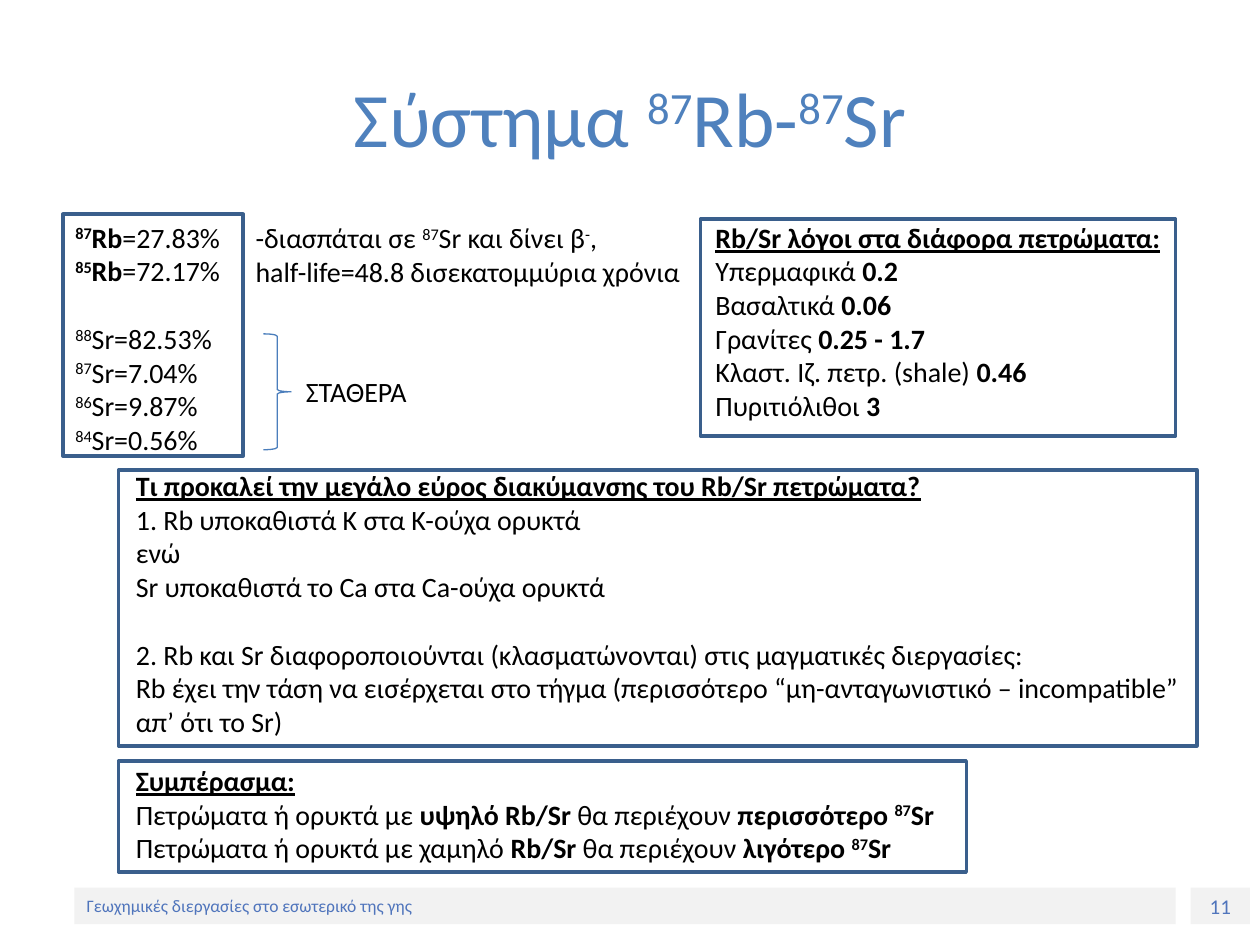
from pptx import Presentation
from pptx.dml.color import RGBColor
from pptx.enum.shapes import MSO_SHAPE
from pptx.enum.text import MSO_ANCHOR, PP_ALIGN
from pptx.util import Inches, Pt

WIDTH, HEIGHT = Inches(10), Inches(7.5)
FONT = "Calibri"
BODY_SIZE = 16
BLANK_LAYOUT = 6
COLORS = {
    "text": "000000",
    "title": "4F81BD",
    "footer": "5075BC",
    "footer_fill": "F2F2F2",
    "frame": "3A5F8C",
    "brace": "4B7EBC",
}
# Marks that switch a style on and off within a line of text
MARKS = {"*": "bold", "_": "underline", "^": "superscript"}

ISOTOPES = [
    "*^87^Rb*=27.83%",
    "*^85^Rb*=72.17%",
    "^88^Sr=82.53%",
    "^87^Sr=7.04%",
    "^86^Sr=9.87%",
    "^84^Sr=0.56%",
]
DECAY = [
    "-διασπάται σε ^87^Sr και δίνει β^-^,",
    "half-life=48.8 δισεκατομμύρια χρόνια",
]
RATIOS = [
    "*_Rb/Sr λόγοι στα διάφορα πετρώματα:_*",
    "Υπερμαφικά *0.2*",
    "Βασαλτικά *0.06*",
    "Γρανίτες *0.25 - 1.7*",
    "Κλαστ. Ιζ. πετρ. (shale) *0.46*",
    "Πυριτιόλιθοι *3*",
]
CAUSES = [
    "*_Τι προκαλεί την μεγάλο εύρος διακύμανσης του Rb/Sr πετρώματα?_*",
    "1. Rb υποκαθιστά K στα K-ούχα ορυκτά",
    "ενώ",
    "Sr υποκαθιστά το Ca στα Ca-ούχα ορυκτά",
    "2. Rb και Sr διαφοροποιούνται (κλασματώνονται) στις μαγματικές διεργασίες:",
    "Rb έχει την τάση να εισέρχεται στο τήγμα (περισσότερο “μη-ανταγωνιστικό – incompatible”",
    "απ’ ότι το Sr)",
]
CONCLUSION = [
    "*_Συμπέρασμα:_*",
    "Πετρώματα ή ορυκτά με *υψηλό Rb/Sr* θα περιέχουν *περισσότερο ^87^Sr*",
    "Πετρώματα ή ορυκτά με χαμηλό *Rb/Sr* θα περιέχουν *λιγότερο ^87^Sr*",
]


def area(left, top, width, height):
    """Turn percentages of the slide's size into lengths."""
    return [
        int(share * full / 100)
        for share, full in zip((left, top, width, height), (WIDTH, HEIGHT) * 2)
    ]


def color(name):
    return RGBColor.from_string(COLORS[name])


def split_marks(line):
    """Yield each piece of a marked line with the set of its styles."""
    styles, piece = set(), ""
    for letter in line:
        if letter in MARKS:
            if piece:
                yield piece, set(styles)
            styles ^= {MARKS[letter]}
            piece = ""
        else:
            piece += letter
    if piece:
        yield piece, styles


def fill_text(frame, lines, size, color_name, align, anchor, gap_before=None):
    """Write marked lines; the line numbered gap_before follows an empty line's gap."""
    frame.word_wrap = True
    frame.vertical_anchor = anchor
    for index, line in enumerate(lines):
        paragraph = frame.paragraphs[0] if index == 0 else frame.add_paragraph()
        paragraph.alignment = align
        if index == gap_before:
            paragraph.space_before = Pt(size * 1.22)
        for piece, styles in split_marks(line):
            span = paragraph.add_run()
            span.text = piece
            span.font.name = FONT
            span.font.size = Pt(size)
            span.font.color.rgb = color(color_name)
            span.font.bold = "bold" in styles
            span.font.underline = "underline" in styles
            if "superscript" in styles:
                span.font._element.set("baseline", "30000")


def add_text(page, place, lines, size=BODY_SIZE, color_name="text",
             align=PP_ALIGN.LEFT, anchor=MSO_ANCHOR.TOP, gap_before=None):
    box = page.shapes.add_textbox(*area(*place))
    fill_text(box.text_frame, lines, size, color_name, align, anchor, gap_before)


def add_outline(page, kind, place, color_name, width):
    shape = page.shapes.add_shape(kind, *area(*place))
    shape.shadow.inherit = False
    shape.fill.background()
    shape.line.color.rgb = color(color_name)
    shape.line.width = Pt(width)


def add_footer(page, place, text, size, align):
    bar = page.shapes.add_shape(MSO_SHAPE.RECTANGLE, *area(*place))
    bar.shadow.inherit = False
    bar.fill.solid()
    bar.fill.fore_color.rgb = color("footer_fill")
    bar.line.fill.background()
    fill_text(bar.text_frame, [text], size, "footer", align, MSO_ANCHOR.MIDDLE)


def main():
    deck = Presentation()
    deck.slide_width, deck.slide_height = WIDTH, HEIGHT
    page = deck.slides.add_slide(deck.slide_layouts[BLANK_LAYOUT])

    add_footer(page, (94.5, 93.93, 4.7, 3.87), "11", 12, PP_ALIGN.CENTER)
    add_footer(page, (5.9, 93.93, 87.4, 3.87),
               "Γεωχημικές διεργασίες στο εσωτερικό της γης", 10, PP_ALIGN.LEFT)

    add_text(page, (5, 4, 90, 16.67), ["Σύστημα ^87^Rb-^87^Sr"], 44, "title",
             PP_ALIGN.CENTER, MSO_ANCHOR.MIDDLE)
    add_text(page, (5, 22.67, 14.3, 26.53), ISOTOPES, gap_before=2)
    add_text(page, (19.3, 22.67, 36.5, 8.53), DECAY)
    add_text(page, (23.3, 38.93, 11.6, 4.93), ["ΣΤΑΘΕΡΑ"])
    add_text(page, (55.8, 22.67, 39.2, 22.93), RATIOS)
    add_text(page, (9.8, 48.93, 85.2, 30.13), CAUSES, gap_before=4)
    add_text(page, (9.8, 80.13, 72.6, 12.13), CONCLUSION)

    for place in (
        (5, 22.67, 14.3, 25.6),
        (55.6, 23.2, 37.7, 22.93),
        (9.4, 49.73, 85.6, 29.2),
        (9.4, 80.53, 67.3, 11.73),
    ):
        add_outline(page, MSO_SHAPE.RECTANGLE, place, "frame", 2)
    add_outline(page, MSO_SHAPE.RIGHT_BRACE, (20.9, 35.33, 2.2, 12.27), "brace", 0.75)

    deck.save("out.pptx")


if __name__ == "__main__":
    main()
